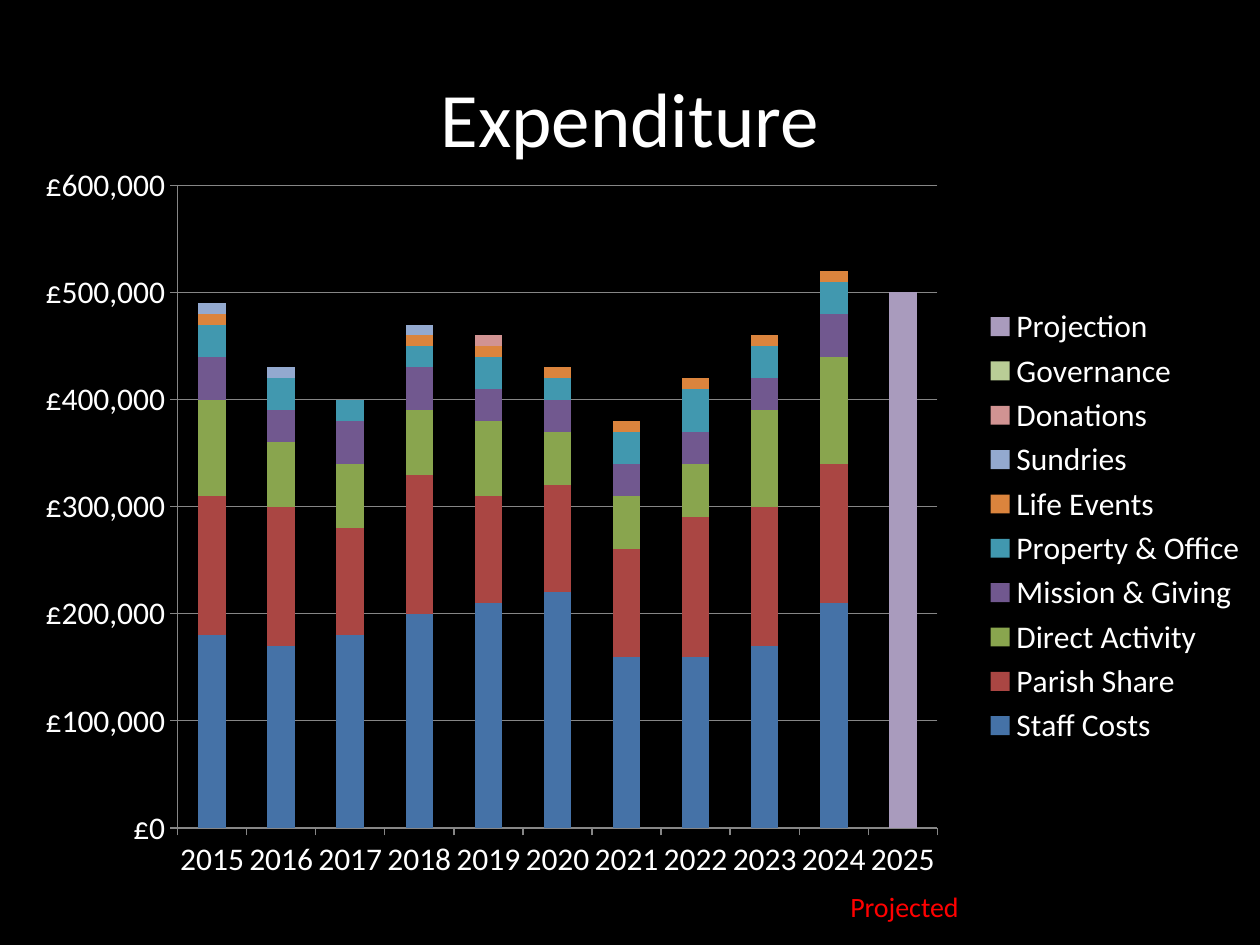
from lxml import etree
from pptx import Presentation
from pptx import util as u
from pptx.chart.data import CategoryChartData
from pptx.dml.color import RGBColor
from pptx.enum import chart as charts, text
from pptx.oxml import parse_xml
from pptx.oxml.ns import nsdecls

BLACK = RGBColor(0x00, 0x00, 0x00)
WHITE = RGBColor(0xFF, 0xFF, 0xFF)
RED = RGBColor(0xFF, 0x00, 0x00)
GREY = RGBColor(0x86, 0x86, 0x86)
BLUE = RGBColor(0x45, 0x72, 0xA7)
BRICK = RGBColor(0xAA, 0x46, 0x43)
GREEN = RGBColor(0x89, 0xA5, 0x4E)
PURPLE = RGBColor(0x71, 0x58, 0x8F)
TEAL = RGBColor(0x41, 0x98, 0xAF)
ORANGE = RGBColor(0xDB, 0x84, 0x3D)
PALE_BLUE = RGBColor(0x93, 0xA9, 0xCF)
PINK = RGBColor(0xD1, 0x93, 0x92)
PALE_GREEN = RGBColor(0xB9, 0xCD, 0x96)
LILAC = RGBColor(0xA9, 0x9B, 0xBD)

YEARS = [str(year) for year in range(2015, 2026)]
NO_VALUE = None
UNIT = 10000

# Name, colour, tens of thousands of pounds for each year
EXPENDITURE = [
    ("Staff Costs", BLUE, [18, 17, 18, 20, 21, 22, 16, 16, 17, 21, NO_VALUE]),
    ("Parish Share", BRICK, [13, 13, 10, 13, 10, 10, 10, 13, 13, 13, NO_VALUE]),
    ("Direct Activity", GREEN, [9, 6, 6, 6, 7, 5, 5, 5, 9, 10, NO_VALUE]),
    ("Mission & Giving", PURPLE, [4, 3, 4, 4, 3, 3, 3, 3, 3, 4, NO_VALUE]),
    ("Property & Office", TEAL, [3, 3, 2, 2, 3, 2, 3, 4, 3, 3, NO_VALUE]),
    ("Life Events", ORANGE, [1, 0, NO_VALUE, 1, 1, 1, 1, 1, 1, 1, NO_VALUE]),
    ("Sundries", PALE_BLUE, [1, 1, 0, 1, 0, 0, 0, 0, 0, 0, NO_VALUE]),
    ("Donations", PINK, [NO_VALUE] * 3 + [0, 1, 0, 0, 0, 0, 0, NO_VALUE]),
    ("Governance", PALE_GREEN, [NO_VALUE] * 3 + [0] * 7 + [NO_VALUE]),
    ("Projection", LILAC, [NO_VALUE] * 10 + [50]),
]


class SlideBuilder:
    """Holds the style and the slide; positions are percentages of its size."""
    font_name = "Calibri"

    def __init__(self, presentation):
        self.width = presentation.slide_width
        self.height = presentation.slide_height
        self.slide = presentation.slides.add_slide(presentation.slide_layouts[5])
        fill = self.slide.background.fill
        fill.solid()
        fill.fore_color.rgb = BLACK

    def box(self, left, top, width, height):
        """Turn percentages of the slide's size into lengths."""
        return (round(left * self.width / 100), round(top * self.height / 100),
                round(width * self.width / 100), round(height * self.height / 100))

    def style(self, font, size, color):
        font.name = self.font_name
        font.size = u.Pt(size)
        font.color.rgb = color

    def add_run(self, paragraph, words, size, color):
        run = paragraph.add_run()
        run.text = words
        self.style(run.font, size, color)

    def title(self, words, *percentages):
        title = self.slide.shapes.title
        title.left, title.top, title.width, title.height = self.box(*percentages)
        title.text_frame.vertical_anchor = text.MSO_ANCHOR.MIDDLE
        paragraph = title.text_frame.paragraphs[0]
        paragraph.alignment = text.PP_ALIGN.CENTER
        self.add_run(paragraph, words, 44, WHITE)

    def label(self, words, color, *percentages):
        frame = self.slide.shapes.add_textbox(*self.box(*percentages)).text_frame
        frame.word_wrap = False
        frame.auto_size = text.MSO_AUTO_SIZE.SHAPE_TO_FIT_TEXT
        self.add_run(frame.paragraphs[0], words, 16, color)

    def stacked_columns(self, categories, series_rows, *percentages):
        data = CategoryChartData()
        data.categories = categories
        for name, _, amounts in series_rows:
            data.add_series(name, [None if amount is None else amount * UNIT
                                   for amount in amounts])
        chart = self.slide.shapes.add_chart(
            charts.XL_CHART_TYPE.COLUMN_STACKED, *self.box(*percentages), data).chart
        self.style(chart.font, 18, WHITE)
        chart.has_title = False
        plot = chart.plots[0]
        plot.gap_width, plot.overlap, plot.vary_by_categories = 150, 100, False
        for series, (_, color, _) in zip(plot.series, series_rows):
            series.format.fill.solid()
            series.format.fill.fore_color.rgb = color
        self.format_axes(chart)
        chart.has_legend = True
        chart.legend.position = charts.XL_LEGEND_POSITION.RIGHT
        chart.legend.include_in_layout = False
        position = chart.legend._element.find("{*}legendPos")
        position.addnext(self.layout(78, 20.5, 21, 59))
        plot_area = chart._chartSpace.chart.plotArea
        for old_layout in plot_area.findall("{*}layout"):
            plot_area.remove(old_layout)
        plot_area.insert(0, self.layout(14.1, 5.3, 60.3, 84.3, inner=True))

    def format_axes(self, chart):
        value_axis = chart.value_axis
        value_axis.minimum_scale, value_axis.maximum_scale = 0, 600000
        value_axis.major_unit = 100000
        value_axis.tick_labels.number_format = '"£"#,##0'
        value_axis.tick_labels.number_format_is_linked = False
        value_axis.has_major_gridlines = True
        value_axis.major_gridlines.format.line.color.rgb = GREY
        for axis in (value_axis, chart.category_axis):
            axis.major_tick_mark = charts.XL_TICK_MARK.OUTSIDE
            axis.format.line.color.rgb = GREY

    @staticmethod
    def layout(x, y, w, h, inner=False):
        """Make a manual layout in percentages of the chart's size."""
        layout = parse_xml(f"<c:layout {nsdecls('c')}><c:manualLayout/></c:layout>")
        settings = [("layoutTarget", "inner")] if inner else []
        settings += [("xMode", "edge"), ("yMode", "edge")]
        settings += [(name, round(value / 100, 4))
                     for name, value in zip("xywh", (x, y, w, h))]
        for name, value in settings:
            tag = etree.QName(layout.nsmap["c"], name)
            etree.SubElement(layout[0], tag).set("val", str(value))
        return layout


def main():
    presentation = Presentation()
    presentation.slide_width = u.Inches(10)
    presentation.slide_height = u.Inches(7.5)
    builder = SlideBuilder(presentation)
    builder.title("Expenditure", 5, 4, 90, 16.67)
    builder.stacked_columns(YEARS, EXPENDITURE, 0, 15.35, 100, 80.67)
    builder.label("Projected", RED, 66.5, 93.47, 10.8, 4.93)
    presentation.save("out.pptx")


if __name__ == "__main__":
    main()
